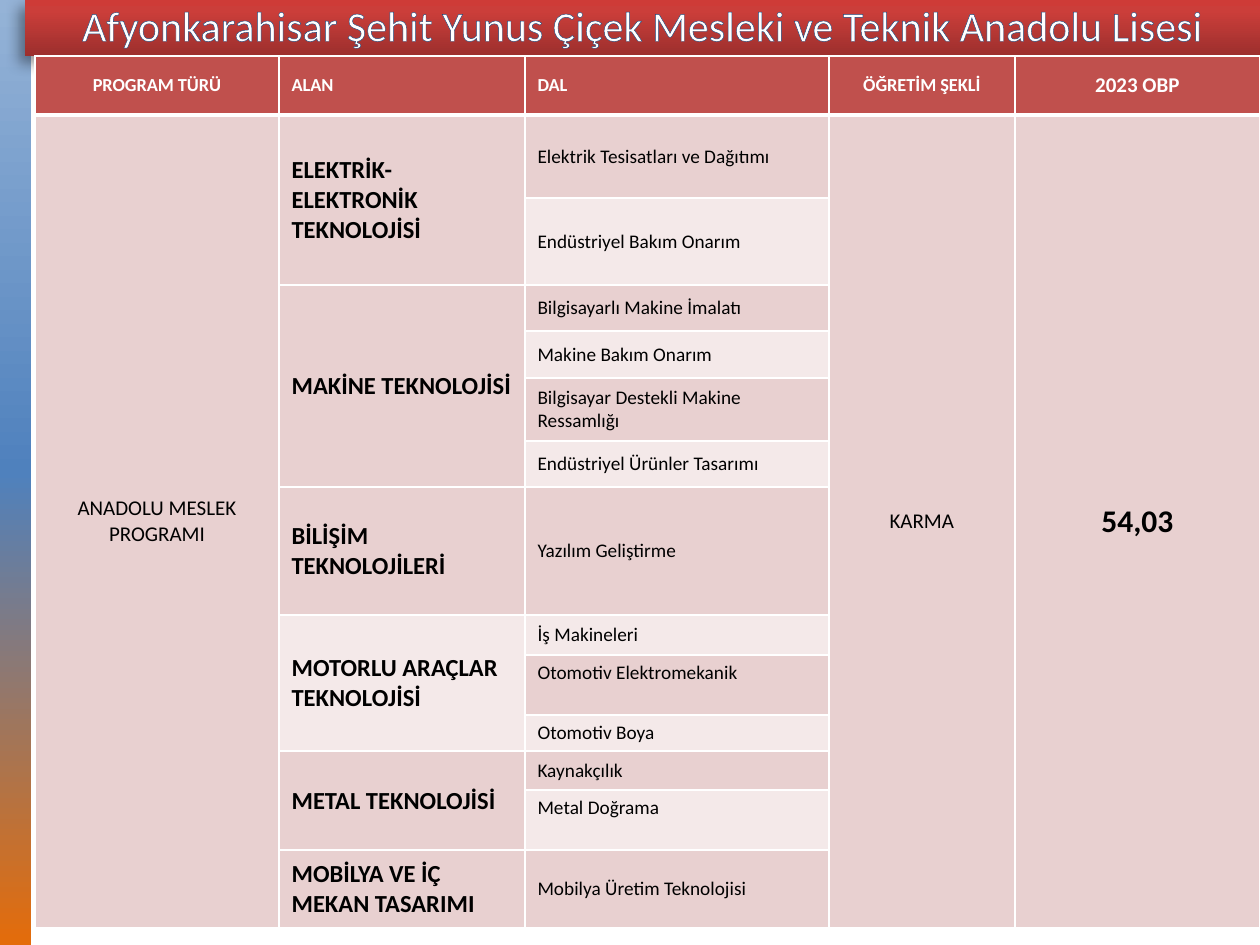
"""Build the slide listing a vocational school's programme areas, branches and 2023 score."""
from lxml import etree
from pptx import Presentation
from pptx.dml.color import RGBColor
from pptx.enum.shapes import MSO_SHAPE
from pptx.enum.text import MSO_ANCHOR, MSO_AUTO_SIZE, PP_ALIGN
from pptx.oxml import parse_xml
from pptx.oxml.ns import nsdecls
from pptx.util import Pt

PX = 914400 // 126
TOP, MIDDLE, BOTTOM = MSO_ANCHOR.TOP, MSO_ANCHOR.MIDDLE, MSO_ANCHOR.BOTTOM
LEFT, CENTER = PP_ALIGN.LEFT, PP_ALIGN.CENTER
RECTANGLE, NO_FIT = MSO_SHAPE.RECTANGLE, MSO_AUTO_SIZE.NONE
RED, ROSE, PALE, WHITE, BLACK = "C0504D", "E8D0D0", "F4E9E9", "FFFFFF", "000000"


def set_gradient(shape, stops, angle):
    marks = "".join(f'<a:gs pos="{place * 1000}"><a:srgbClr val="{color}"/></a:gs>'
                    for place, color in stops)
    shape._element.spPr.append(parse_xml(
        f'<a:gradFill {nsdecls("a")} rotWithShape="1"><a:gsLst>{marks}</a:gsLst>'
        f'<a:lin ang="{angle * 60000}" scaled="0"/></a:gradFill>'))


def write_text(frame, text, size, color, bold=False, align=LEFT):
    frame.text = text
    frame.word_wrap = True
    paragraph = frame.paragraphs[0]
    paragraph.alignment = align
    font = paragraph.runs[0].font
    font.name, font.size, font.bold = "Calibri", Pt(size), bold
    font.color.rgb = RGBColor.from_string(color)


prs = Presentation()
prs.slide_width, prs.slide_height = 1260 * PX, 945 * PX
slide = prs.slides.add_slide(prs.slide_layouts[5])

stripe = slide.shapes.add_shape(RECTANGLE, 0, 0, 31 * PX, 945 * PX)
set_gradient(stripe, [(0, "95B3D7"), (50, "4F81BD"), (100, "E46C0A")], 90)
stripe.line.fill.background()
stripe.shadow.inherit = False
slide.shapes._spTree.insert(2, stripe._element)

school = slide.shapes.title
school.left, school.top, school.width, school.height = 25 * PX, 0, 1235 * PX, 56 * PX
write_text(school.text_frame, "Afyonkarahisar Şehit Yunus Çiçek Mesleki ve Teknik Anadolu Lisesi",
           24, WHITE, align=CENTER)
school.text_frame.vertical_anchor = BOTTOM
school.text_frame.auto_size = NO_FIT
set_gradient(school, [(0, "9C2F2D"), (80, "CB3E3A"), (100, "CE3B37")], 270)
school._element.spPr.append(parse_xml(
    f'<a:effectLst {nsdecls("a")}><a:outerShdw blurRad="101600" dist="63500" dir="8100000">'
    '<a:srgbClr val="000000"><a:alpha val="40000"/></a:srgbClr></a:outerShdw></a:effectLst>'))
school.text_frame.paragraphs[0].runs[0].font._element.insert(0, parse_xml(
    f'<a:ln {nsdecls("a")} w="12700"><a:solidFill><a:srgbClr val="1F497D"/></a:solidFill></a:ln>'))

headings = [("PROGRAM TÜRÜ", 10.5, CENTER), ("ALAN", 10.5, LEFT), ("DAL", 10.5, LEFT),
            ("ÖĞRETİM ŞEKLİ", 10.5, CENTER), ("2023 OBP", 12, CENTER)]
areas = [
    ("ELEKTRİK- ELEKTRONİK TEKNOLOJİSİ",
     ["Elektrik Tesisatları ve Dağıtımı", "Endüstriyel Bakım Onarım"]),
    ("MAKİNE TEKNOLOJİSİ",
     ["Bilgisayarlı Makine İmalatı", "Makine Bakım Onarım",
      "Bilgisayar Destekli Makine Ressamlığı", "Endüstriyel Ürünler Tasarımı"]),
    ("BİLİŞİM TEKNOLOJİLERİ", ["Yazılım Geliştirme"]),
    ("MOTORLU ARAÇLAR TEKNOLOJİSİ",
     ["İş Makineleri", "Otomotiv Elektromekanik", "Otomotiv Boya"]),
    ("METAL TEKNOLOJİSİ", ["Kaynakçılık", "Metal Doğrama"]),
    ("MOBİLYA VE İÇ MEKAN TASARIMI", ["Mobilya Üretim Teknolojisi"]),
]
whole_school = [(0, "ANADOLU MESLEK PROGRAMI", 12, False), (3, "KARMA", 12, False),
                (4, "54,03", 18, True)]
top_branches = ["Otomotiv Elektromekanik", "Metal Doğrama"]
widths = [244, 246, 304, 186, 245]
heights = [59, 83, 87, 46, 47, 63, 46, 128, 40, 60, 36, 39, 60, 78]

programs = slide.shapes.add_table(len(heights), len(widths), 35 * PX, 56 * PX,
                                  sum(widths) * PX, sum(heights) * PX).table
for column, width in zip(programs.columns, widths):
    column.width = width * PX
for row, height in zip(programs.rows, heights):
    row.height = height * PX

for r in range(len(heights)):
    for c in range(len(widths)):
        cell = programs.cell(r, c)
        for side in "LRTB":
            heavy = (r, side) in [(0, "B"), (1, "T")]
            border = etree.SubElement(cell._tc.get_or_add_tcPr(), "{%s}ln%s" % (
                "http://schemas.openxmlformats.org/drawingml/2006/main", side))
            border.set("w", str(Pt(3 if heavy else 1)))
            border.append(parse_xml(
                f'<a:solidFill {nsdecls("a")}><a:srgbClr val="{WHITE}"/></a:solidFill>'))
        cell.fill.solid()
        shade = RED if r == 0 else ROSE if r % 2 else PALE
        cell.fill.fore_color.rgb = RGBColor.from_string(shade)
        cell.vertical_anchor = MIDDLE

for c, (heading, size, align) in enumerate(headings):
    write_text(programs.cell(0, c).text_frame, heading, size, WHITE, True, align)

for c, value, size, bold in whole_school:
    cell = programs.cell(1, c)
    cell.merge(programs.cell(len(heights) - 1, c))
    write_text(cell.text_frame, value, size, BLACK, bold, CENTER)

first = 1
for area, branches in areas:
    area_cell = programs.cell(first, 1)
    if len(branches) > 1:
        area_cell.merge(programs.cell(first + len(branches) - 1, 1))
    write_text(area_cell.text_frame, area, 14, BLACK, True)
    for r, branch in enumerate(branches, first):
        branch_cell = programs.cell(r, 2)
        write_text(branch_cell.text_frame, branch, 11, BLACK)
        if branch in top_branches:
            branch_cell.vertical_anchor = TOP
    first += len(branches)

prs.save("out.pptx")
